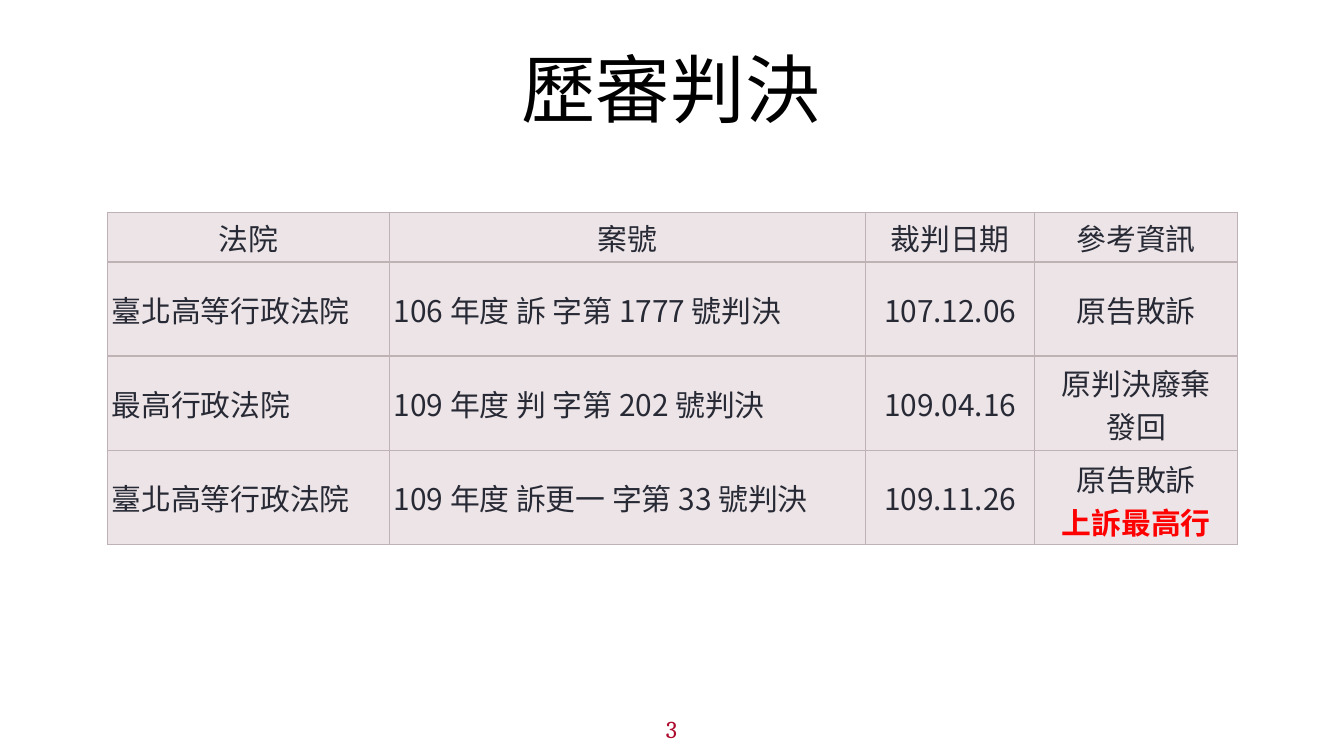
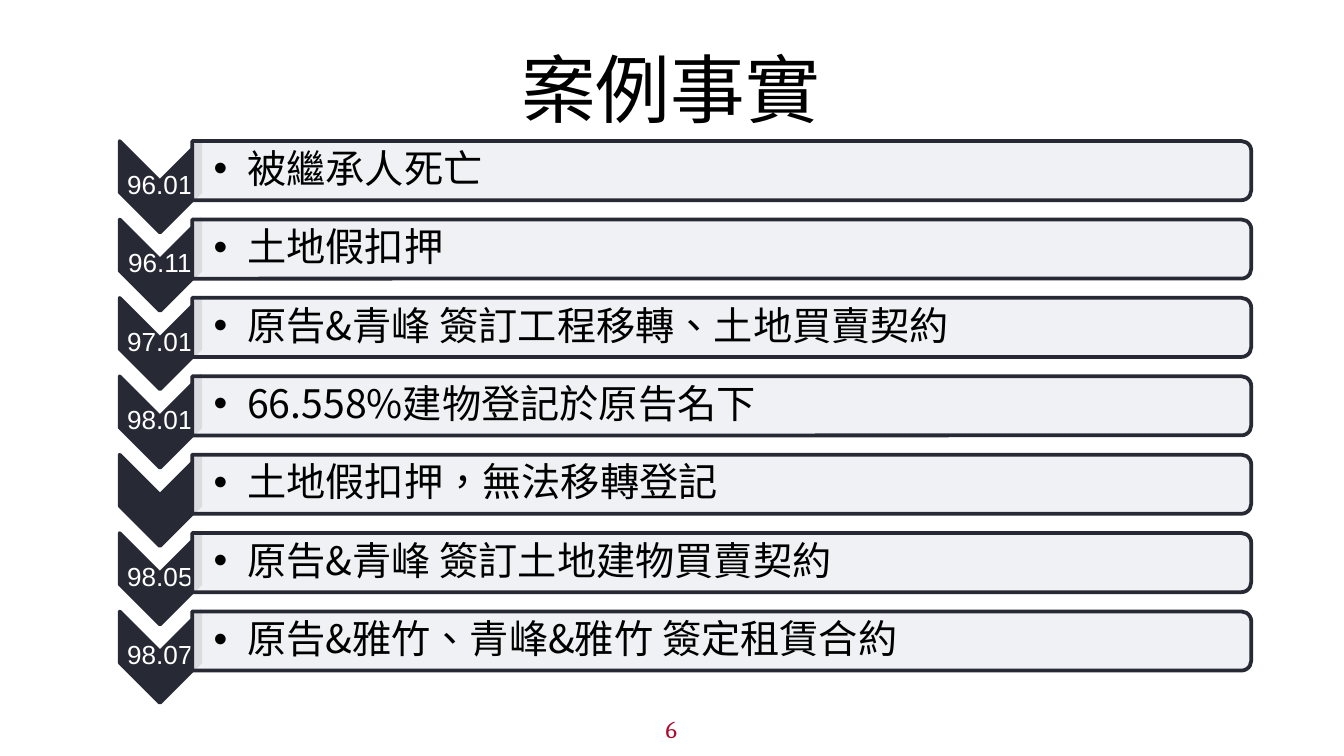
from dataclasses import dataclass

from lxml.etree import SubElement
from pptx import Presentation
from pptx.dml.color import RGBColor
from pptx.enum.lang import MSO_LANGUAGE_ID
from pptx.enum.shapes import MSO_SHAPE
from pptx.enum.text import MSO_ANCHOR, MSO_AUTO_SIZE, PP_ALIGN
from pptx.oxml.ns import qn
from pptx.util import Inches, Pt


@dataclass(frozen=True)
class Theme:
    """Colours, fonts and type sizes shared by the slides."""

    ink: str = "272A35"
    black: str = "000000"
    white: str = "FFFFFF"
    alert: str = "FF0000"
    number: str = "AD0B2D"
    cell: str = "EDE4E7"
    border: str = "BEB2B5"
    bar: str = "EFF0F3"
    sans: str = "Noto Sans CJK SC"
    serif: str = "Cambria"
    label: str = "Arial"
    title_size: int = 40
    event_size: int = 21
    cell_size: int = 16
    label_size: int = 14
    number_size: int = 13


THEME = Theme()
PAGE_WIDTH = Inches(10)
PAGE_HEIGHT = PAGE_WIDTH * 9 // 16
TITLE_BOX = (3.78, 0.27, 2.45, 0.77)
NUMBER_BOX = (4.44, 5.23, 1.11, 0.39)
TABLE_BOX = (0.8, 1.58, 8.41, 2.48)
TIMELINE_BOX = (0.89, 1.05, 8.42, 4.18)

COLUMN_WIDTHS = (2.1, 3.54, 1.26, 1.51)
ROW_HEIGHTS = (0.37, 0.7, 0.7, 0.7)
RULINGS = (
    ("法院", "案號", "裁判日期", "參考資訊"),
    ("臺北高等行政法院", "106 年度 訴 字第 1777 號判決", "107.12.06", "原告敗訴"),
    ("最高行政法院", "109 年度 判 字第 202 號判決", "109.04.16", "原判決廢棄\n發回"),
    ("臺北高等行政法院", "109 年度 訴更一 字第 33 號判決", "109.11.26", "原告敗訴\n上訴最高行"),
)
HIGHLIGHT = "上訴最高行"
EVENTS = (
    ("96.01", "被繼承人死亡"),
    ("96.11", "土地假扣押"),
    ("97.01", "原告&青峰 簽訂工程移轉、土地買賣契約"),
    ("98.01", "66.558%建物登記於原告名下"),
    ("", "土地假扣押，無法移轉登記"),
    ("98.05", "原告&青峰 簽訂土地建物買賣契約"),
    ("98.07", "原告&雅竹、青峰&雅竹 簽定租賃合約"),
)


def apply(target, values):
    """Set each named attribute of the target."""
    for name, value in values.items():
        setattr(target, name, value)


def margins(left, top, right, bottom):
    """Return the margin attributes of a text frame or cell."""
    sides = ("left", "top", "right", "bottom")
    return {f"margin_{side}": Inches(size)
            for side, size in zip(sides, (left, top, right, bottom))}


def add_span(para, text, size, font, colour, bold=False):
    """Add one formatted run, covering East Asian glyphs too."""
    span = para.add_run()
    span.text = text
    apply(span.font, {"size": Pt(size), "name": font, "bold": bold,
                      "language_id": MSO_LANGUAGE_ID.TRADITIONAL_CHINESE})
    span.font.color.rgb = RGBColor.from_string(colour)
    latin = span.font._element.find(qn("a:latin"))
    east = latin.makeelement(qn("a:ea"), {"typeface": font})
    latin.addnext(east)


def add_text(page, box, text, style, frame_format, para_format):
    """Add a one-paragraph text box and return its paragraph."""
    frame = page.shapes.add_textbox(*map(Inches, box)).text_frame
    apply(frame, {"word_wrap": True, **frame_format})
    para = frame.paragraphs[0]
    apply(para, para_format)
    add_span(para, text, *style)
    return para


def add_bullet(para, indent):
    """Give a paragraph a hanging round bullet."""
    props = para._p.get_or_add_pPr()
    props.set("marL", str(Inches(indent)))
    props.set("indent", str(-Inches(indent)))
    colour = SubElement(props, qn("a:buClr"))
    SubElement(colour, qn("a:srgbClr"), val=THEME.black)
    SubElement(props, qn("a:buFont"), typeface=THEME.label)
    SubElement(props, qn("a:buChar"), char="•")


def add_turned_shape(page, kind, box, fill):
    """Add a shape turned clockwise so that it fills the given box."""
    left, top, width, height = box
    shift = (width - height) / 2
    shape = page.shapes.add_shape(
        kind, *map(Inches, (left + shift, top - shift, height, width)))
    shape.rotation = 90
    shape.shadow.inherit = False
    shape.fill.solid()
    shape.fill.fore_color.rgb = RGBColor.from_string(fill)
    shape.line.color.rgb = RGBColor.from_string(THEME.ink)
    shape.line.width = Pt(2)
    return shape


def add_page(deck, title, number):
    """Add a blank page with its title and page number."""
    page = deck.slides.add_slide(deck.slide_layouts[6])
    add_text(page, NUMBER_BOX, number,
             (THEME.number_size, THEME.serif, THEME.number),
             {"vertical_anchor": MSO_ANCHOR.MIDDLE, **margins(0, 0, 0, 0)},
             {"alignment": PP_ALIGN.CENTER})
    add_text(page, TITLE_BOX, title,
             (THEME.title_size, THEME.sans, THEME.black),
             {"auto_size": MSO_AUTO_SIZE.SHAPE_TO_FIT_TEXT}, {})
    return page


def add_borders(cell):
    """Draw a thin line on all four sides of a cell."""
    props = cell._tc.get_or_add_tcPr()
    for index, side in enumerate(("lnL", "lnR", "lnT", "lnB")):
        line = props.makeelement(qn(f"a:{side}"), {"w": str(Pt(0.75))})
        fill = SubElement(line, qn("a:solidFill"))
        SubElement(fill, qn("a:srgbClr"), val=THEME.border)
        props.insert(index, line)


def fill_cell(cell, text, alignment):
    """Write and format one table cell."""
    lines = text.split("\n")
    cell.vertical_anchor = MSO_ANCHOR.MIDDLE
    if HIGHLIGHT not in lines:
        apply(cell, margins(0.03, 0.01, 0.03, 0))
    cell.fill.solid()
    cell.fill.fore_color.rgb = RGBColor.from_string(THEME.cell)
    add_borders(cell)
    frame = cell.text_frame
    for index, line in enumerate(lines):
        para = frame.add_paragraph() if index else frame.paragraphs[0]
        para.alignment = alignment
        marked = line == HIGHLIGHT
        add_span(para, line, THEME.cell_size, THEME.sans,
                 THEME.alert if marked else THEME.ink, marked)


def add_rulings(page, box):
    """Add the table of rulings."""
    table = page.shapes.add_table(
        len(RULINGS), len(COLUMN_WIDTHS), *map(Inches, box)).table
    for column, width in zip(table.columns, COLUMN_WIDTHS):
        column.width = Inches(width)
    for row, height in zip(table.rows, ROW_HEIGHTS):
        row.height = Inches(height)
    for r, ruling in enumerate(RULINGS):
        for c, text in enumerate(ruling):
            centred = r == 0 or c > 1
            fill_cell(table.cell(r, c), text,
                      PP_ALIGN.CENTER if centred else PP_ALIGN.LEFT)


def add_event(page, box, date, event):
    """Add one dated chevron with its event bar."""
    left, top, width, height = box
    chevron_width, bar_left, bar_height = 0.6, 0.54, 0.44
    add_turned_shape(page, MSO_SHAPE.CHEVRON,
                     (left, top, chevron_width, height), THEME.ink)
    if date:
        add_text(page, (left, top + 0.3, chevron_width, 0.07), date,
                 (THEME.label_size, THEME.label, THEME.white),
                 {"vertical_anchor": MSO_ANCHOR.MIDDLE,
                  **margins(0.01, 0.01, 0.01, 0.01)},
                 {"alignment": PP_ALIGN.CENTER, "line_spacing": 0.9,
                  "space_after": Pt(5)})
    bar = add_turned_shape(
        page, MSO_SHAPE.ROUND_2_SAME_RECTANGLE,
        (left + bar_left, top, width - bar_left, bar_height), THEME.bar)
    colour = bar.fill._xPr.find(f"{qn('a:solidFill')}/{qn('a:srgbClr')}")
    SubElement(colour, qn("a:alpha"), val="90000")
    para = add_text(
        page, (left + bar_left, top + 0.02, width - bar_left - 0.02, 0.4),
        event, (THEME.event_size, THEME.sans, THEME.black),
        {"vertical_anchor": MSO_ANCHOR.MIDDLE,
         **margins(0.16, 0.01, 0.01, 0.01)},
        {"level": 1, "line_spacing": 0.9, "space_after": Pt(3)})
    add_bullet(para, 0.25)


def add_timeline(page, box):
    """Stack the events at equal steps down the box."""
    left, top, width, height = box
    event_height = 0.68
    step = (height - event_height) / (len(EVENTS) - 1)
    for index, (date, event) in enumerate(EVENTS):
        add_event(page, (left, top + index * step, width, event_height),
                  date, event)


def main():
    """Build and save the deck."""
    deck = Presentation()
    apply(deck, {"slide_width": PAGE_WIDTH, "slide_height": PAGE_HEIGHT})
    add_rulings(add_page(deck, "歷審判決", "3"), TABLE_BOX)
    add_timeline(add_page(deck, "案例事實", "6"), TIMELINE_BOX)
    deck.save("out.pptx")


if __name__ == "__main__":
    main()
